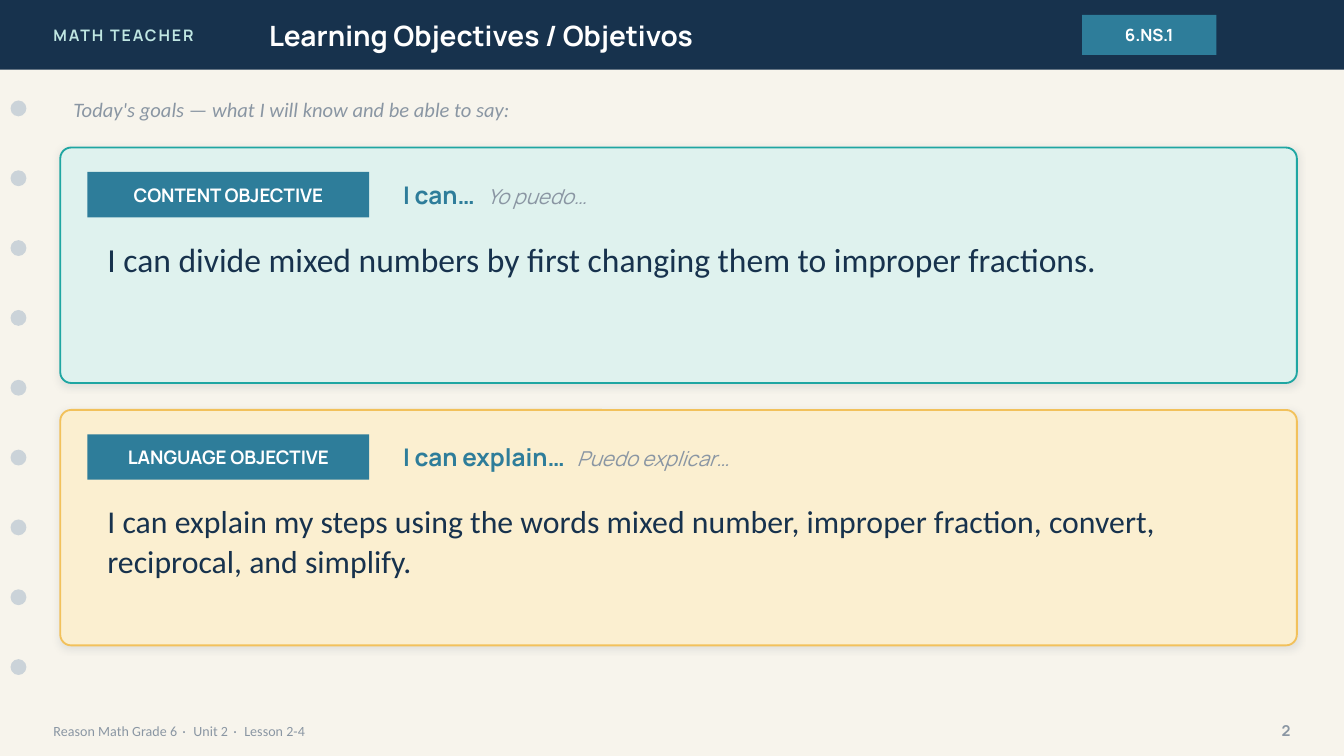
"""Build the learning objectives slide with its two objective cards."""
from dataclasses import dataclass

from lxml.etree import SubElement
from pptx import Presentation
from pptx.dml.color import RGBColor
from pptx.enum.shapes import MSO_SHAPE
from pptx.enum.text import MSO_ANCHOR, MSO_AUTO_SIZE, PP_ALIGN
from pptx.oxml.ns import qn
from pptx.util import Cm, Pt

NAVY = RGBColor(0x17, 0x32, 0x4D)
BLUE = RGBColor(0x2E, 0x7D, 0x9A)
TEAL = RGBColor(0x1F, 0xA6, 0xA2)
MINT = RGBColor(0xDF, 0xF2, 0xEE)
PALE_TEAL = RGBColor(0xBF, 0xE6, 0xE2)
GOLD = RGBColor(0xF2, 0xC1, 0x5B)
CREAM = RGBColor(0xFB, 0xEF, 0xD0)
PAPER = RGBColor(0xF7, 0xF4, 0xEC)
GREY = RGBColor(0x8A, 0x96, 0xA3)
DOT_GREY = RGBColor(0xCB, 0xD3, 0xD9)
WHITE = RGBColor(0xFF, 0xFF, 0xFF)
SHADOW = "1C2E42"

HEAD, BODY = "Manrope", "Calibri"
BAR_H = 1.32
CARD_X, CARD_W, CARD_H = 1.14, 23.37, 4.45


@dataclass
class Objective:
    top: float
    badge: str
    prompt: str
    prompt_es: str
    goal: str
    goal_size: float
    fill: RGBColor
    line: RGBColor


OBJECTIVES = [
    Objective(2.79, "CONTENT OBJECTIVE", "I can…", "Yo puedo…",
              "I can divide mixed numbers by first changing them to improper fractions.",
              18, MINT, TEAL),
    Objective(7.75, "LANGUAGE OBJECTIVE", "I can explain…", "Puedo explicar…",
              "I can explain my steps using the words mixed number, improper fraction, "
              "convert, reciprocal, and simplify.",
              17, CREAM, GOLD),
]


def add_run(p, text: str, *, size: float, color: RGBColor, font: str = HEAD,
            bold: bool = False, italic: bool = False, spacing: float = 0):
    """Append one formatted run to a paragraph."""
    r = p.add_run()
    r.text = text
    r.font.size, r.font.name = Pt(size), font
    r.font.bold, r.font.italic = bold, italic
    r.font.color.rgb = color
    if spacing:
        r.font._element.set("spc", str(round(spacing * 100)))


def set_frame(sp, align=PP_ALIGN.LEFT, anchor=MSO_ANCHOR.MIDDLE):
    """Prepare a shape's text frame and return its first paragraph."""
    tf = sp.text_frame
    tf.word_wrap, tf.auto_size = True, MSO_AUTO_SIZE.NONE
    tf.vertical_anchor = anchor
    p = tf.paragraphs[0]
    p.alignment = align
    return p


def add_text(s, x: float, y: float, w: float, h: float, **frame):
    """Add a text box and return its first paragraph."""
    return set_frame(s.shapes.add_textbox(Cm(x), Cm(y), Cm(w), Cm(h)), **frame)


def add_box(s, kind, x: float, y: float, w: float, h: float, fill: RGBColor):
    """Add a flat filled shape without an outline."""
    sp = s.shapes.add_shape(kind, Cm(x), Cm(y), Cm(w), Cm(h))
    sp.shadow.inherit = False
    sp.fill.solid()
    sp.fill.fore_color.rgb = fill
    sp.line.fill.background()
    return sp


def add_badge(s, text: str, x: float, y: float, w: float, h: float, size: float):
    """Add a blue label with centred white text."""
    sp = add_box(s, MSO_SHAPE.RECTANGLE, x, y, w, h, BLUE)
    add_run(set_frame(sp, PP_ALIGN.CENTER), text, size=size, color=WHITE, bold=True)


def add_soft_shadow(sp):
    """Give a shape a faint shadow straight below it."""
    effects = sp._element.spPr.find(qn("a:effectLst"))
    outer = SubElement(effects, qn("a:outerShdw"), blurRad=str(Pt(4)), dist=str(Pt(1)),
                       dir="5400000", algn="bl", rotWithShape="0")
    color = SubElement(outer, qn("a:srgbClr"), val=SHADOW)
    SubElement(color, qn("a:alpha"), val="10000")


def add_objective(s, o: Objective):
    """Draw one objective card."""
    card = add_box(s, MSO_SHAPE.ROUNDED_RECTANGLE, CARD_X, o.top, CARD_W, CARD_H, o.fill)
    card.adjustments[0] = 0.046
    card.line.color.rgb, card.line.width = o.line, Pt(1)
    add_soft_shadow(card)
    add_badge(s, o.badge, 1.65, o.top + 0.46, 5.33, 0.86, 10)
    p = add_text(s, 7.37, o.top + 0.46, 16.76, 0.86)
    add_run(p, o.prompt, size=13, color=BLUE, bold=True)
    add_run(p, " ", size=13, color=BLUE, bold=True, spacing=4)
    add_run(p, o.prompt_es, size=11, color=GREY, italic=True)
    p = add_text(s, 1.78, o.top + 1.57, 22.1, 2.54, anchor=MSO_ANCHOR.TOP)
    p.line_spacing = 1.05
    add_run(p, o.goal, size=o.goal_size, color=NAVY, font=BODY)


def add_header(s):
    """Draw the top bar with the series name, title and standard."""
    add_box(s, MSO_SHAPE.RECTANGLE, 0, 0, 25.4, BAR_H, NAVY)
    add_run(add_text(s, 0.76, 0, 6.1, BAR_H), "MATH TEACHER",
            size=8.5, color=PALE_TEAL, bold=True, spacing=1)
    title = s.shapes.title
    title.left, title.top, title.width, title.height = Cm(4.83), Cm(0), Cm(14.22), Cm(BAR_H)
    add_run(set_frame(title), "Learning Objectives / Objetivos",
            size=15, color=WHITE, bold=True)
    s.shapes._spTree.append(title._element)
    add_badge(s, "6.NS.1", 20.45, 0.28, 2.54, 0.76, 9)


def add_footer(s):
    """Draw the lesson line and the page number."""
    p = add_text(s, 0.76, 13.46, 17.78, 0.71)
    for i, part in enumerate(["Reason Math Grade 6", "Unit 2", "Lesson 2-4"]):
        if i:
            add_run(p, " · ", size=7.5, color=GREY, font=BODY, spacing=1.1)
        add_run(p, part, size=7.5, color=GREY, font=BODY)
    add_run(add_text(s, 23.37, 13.46, 1.27, 0.71, align=PP_ALIGN.RIGHT), "2",
            size=8, color=GREY, bold=True)


def main():
    """Build and save the slide."""
    prs = Presentation()
    prs.slide_width, prs.slide_height = Cm(25.4), Cm(14.29)
    s = prs.slides.add_slide(prs.slide_layouts[5])
    s.background.fill.solid()
    s.background.fill.fore_color.rgb = PAPER
    add_header(s)
    for i in range(9):
        add_box(s, MSO_SHAPE.OVAL, 0.2, 1.9 + i * 1.32, 0.3, 0.3, DOT_GREY)
    add_footer(s)
    add_run(add_text(s, CARD_X, 1.68, CARD_W, 0.76),
            "Today's goals — what I will know and be able to say:",
            size=11, color=GREY, font=BODY, italic=True)
    for o in OBJECTIVES:
        add_objective(s, o)
    prs.save("out.pptx")


if __name__ == "__main__":
    main()
